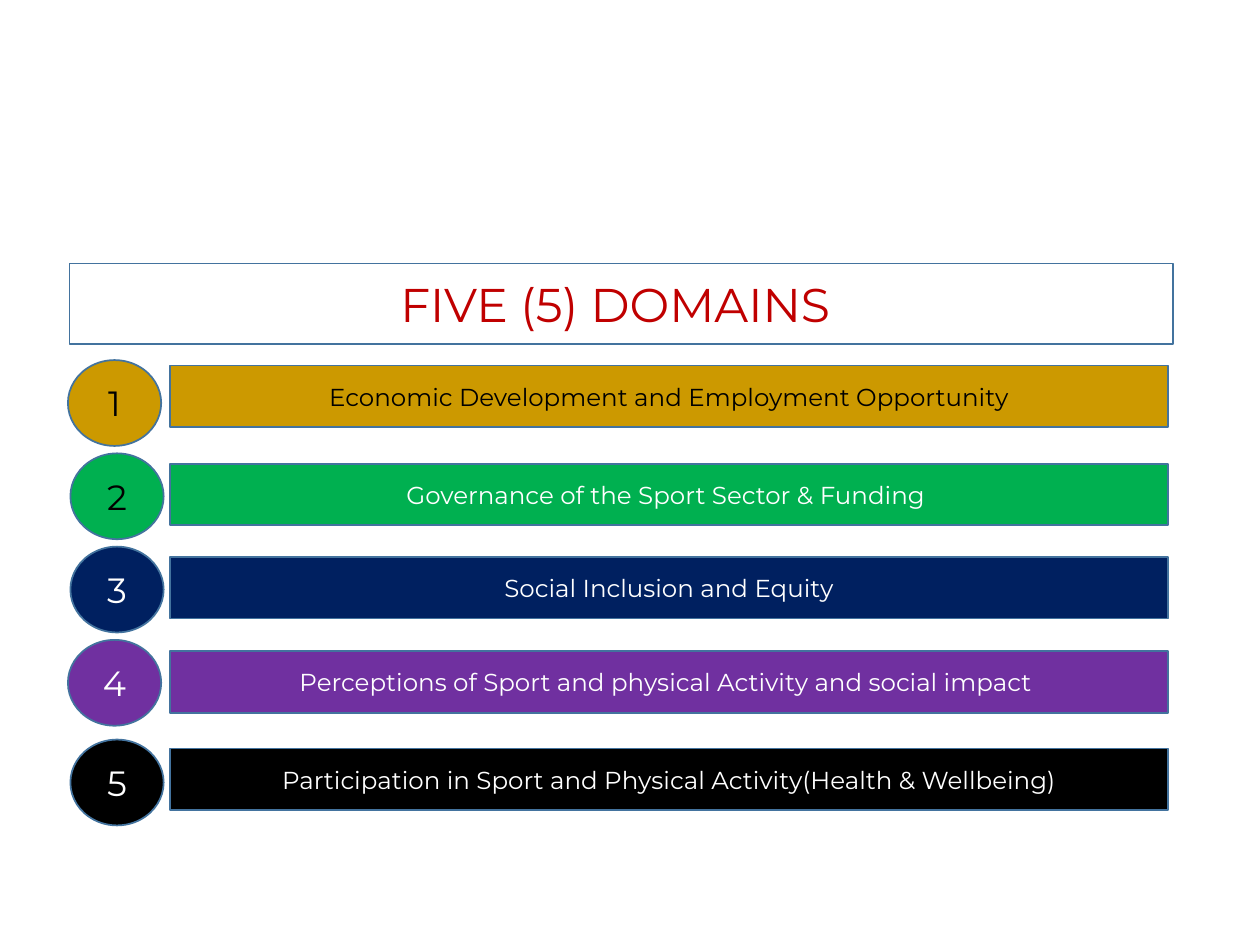
"""Build a slide that lists the five domains as numbered colour bars."""
from dataclasses import dataclass

from pptx import Presentation
from pptx.dml.color import RGBColor
from pptx.enum import shapes, text
from pptx.util import Cm, Pt


@dataclass(frozen=True)
class Theme:
    font: str = "Montserrat"
    head: int = 27
    label: int = 14
    digit: int = 20
    edge: str = "43739E"
    red: str = "C00000"
    gold: str = "CC9900"
    green: str = "00B050"
    navy: str = "002060"
    purple: str = "7030A0"
    black: str = "000000"
    white: str = "FFFFFF"


theme = Theme()


def style(shape, words, size, fill, ink):
    shape.fill.solid()
    shape.fill.fore_color.rgb = RGBColor.from_string(fill)
    shape.line.color.rgb = RGBColor.from_string(theme.edge)
    shape.line.width = Pt(1)
    frame = shape.text_frame
    frame.word_wrap = True
    frame.auto_size = text.MSO_AUTO_SIZE.NONE
    frame.vertical_anchor = text.MSO_ANCHOR.MIDDLE
    para = frame.paragraphs[0]
    para.alignment = text.PP_ALIGN.CENTER
    run = para.add_run()
    run.text = words
    run.font.name = theme.font
    run.font.size = Pt(size)
    run.font.color.rgb = RGBColor.from_string(ink)


def add(slide, kind, box, *look):
    shape = slide.shapes.add_shape(kind, *map(Cm, box))
    shape.shadow.inherit = False
    style(shape, *look)


deck = Presentation()
deck.slide_width, deck.slide_height = Cm(25.4), Cm(19.05)
slide = deck.slides.add_slide(deck.slide_layouts[5])

title = slide.shapes.title
title.left, title.top, title.width, title.height = map(Cm, (1.4, 5.31, 22.25, 1.63))
style(title, "FIVE (5) DOMAINS ", theme.head, theme.white, theme.red)

domains = [
    ("Economic Development and Employment Opportunity",
     theme.gold, theme.black, theme.black, 7.37, 1.37, 7.26),
    ("Governance of the Sport Sector & Funding ",
     theme.green, theme.white, theme.black, 9.35, 1.42, 9.14),
    ("Social Inclusion and Equity",
     theme.navy, theme.white, theme.white, 11.23, 1.42, 11.02),
    ("Perceptions of Sport and physical Activity and social impact ",
     theme.purple, theme.white, theme.white, 13.13, 1.37, 12.9),
    ("Participation in Sport and Physical Activity(Health & Wellbeing)",
     theme.black, theme.white, theme.white, 15.09, 1.42, 14.91),
]
kinds = shapes.MSO_SHAPE
for num, (name, fill, ink, mark, top, left, high) in enumerate(domains, 1):
    add(slide, kinds.RECTANGLE, (3.43, top, 20.12, 1.24),
        name, theme.label, fill, ink)
    add(slide, kinds.OVAL, (left, high, 1.88, 1.73),
        str(num), theme.digit, fill, mark)

deck.save("out.pptx")
